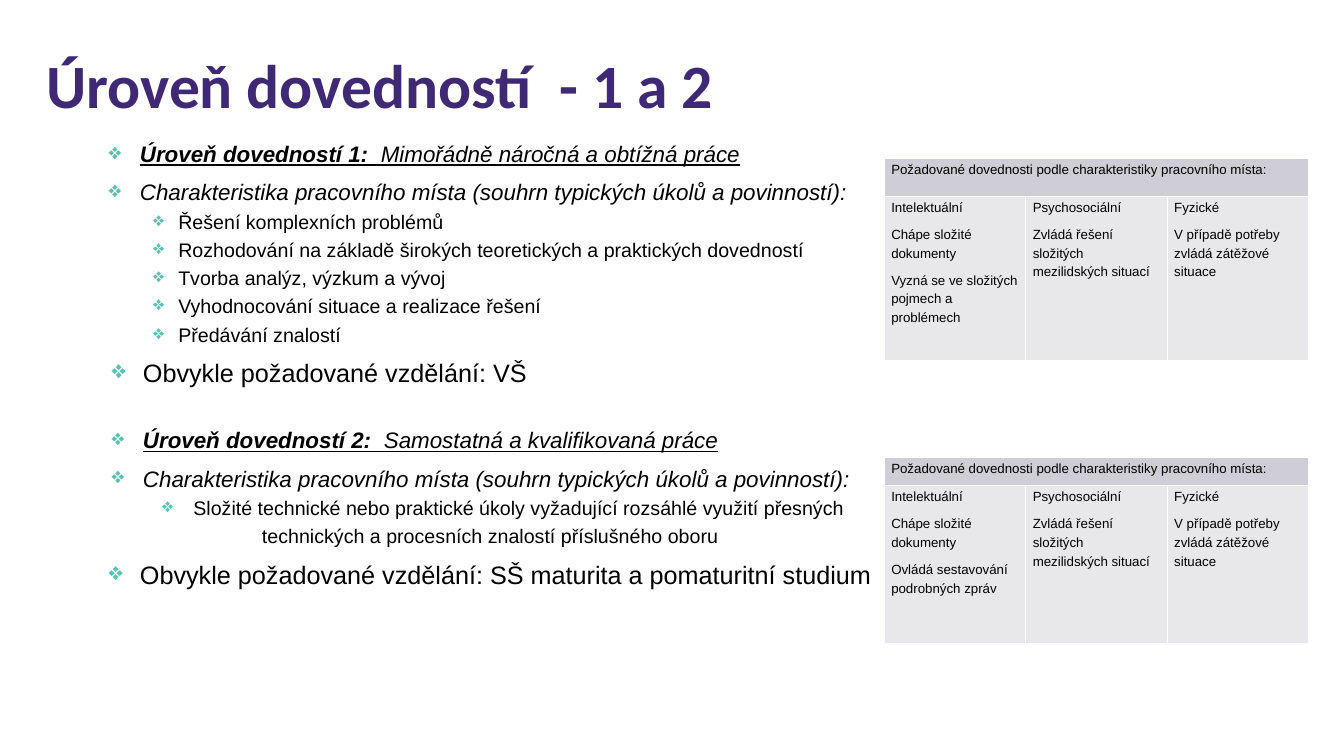
from lxml import etree
from pptx import Presentation
from pptx import util as u
from pptx.dml.color import RGBColor
from pptx.enum import text
from pptx.oxml import ns

Inches, Pt = u.Inches, u.Pt
COLORS = {
    "title": "3F2874", "text": "000000", "bullet": "57C2B2",
    "header": "CFCDD6", "cell": "E8E8EB", "border": "FFFFFF",
}
TASKS = "Charakteristika pracovního místa (souhrn typických úkolů a\u00a0povinností):"
TABLE_TITLE = "Požadované dovednosti podle charakteristiky pracovního místa:"
SOCIAL = ["Psychosociální", "Zvládá řešení složitých mezilidských situací"]
PHYSICAL = ["Fyzické", "V\u00a0případě potřeby zvládá zátěžové situace"]


def add_run(paragraph, content, size, color="text", name="Arial", bold=False, italic=False, underline=False):
    """Add one formatted run."""
    run = paragraph.add_run()
    run.text = content
    font = run.font
    font.name, font.size = name, Pt(size)
    font.bold, font.italic, font.underline = bold, italic, underline
    font.color.rgb = RGBColor.from_string(COLORS[color])


def add_color(parent, color):
    """Add an RGB colour element to a parent element."""
    etree.SubElement(parent, ns.qn("a:srgbClr"), val=COLORS[color])


def add_text_frame(slide, left, top, width, height, anchor):
    """Add a wrapping text box and return its frame."""
    frame = slide.shapes.add_textbox(Inches(left), Inches(top), Inches(width), Inches(height)).text_frame
    frame.word_wrap = True
    frame.vertical_anchor = anchor
    return frame


def next_paragraph(frame):
    """Return the empty first paragraph or a new one."""
    first = frame.paragraphs[0]
    return frame.add_paragraph() if first.runs else first


def add_item(frame, runs, left, hanging=0.31, before=10, level=0):
    """Add a list paragraph; a hanging indent brings a bullet."""
    paragraph = next_paragraph(frame)
    paragraph.level = level
    properties = paragraph._p.get_or_add_pPr()
    properties.set("marL", str(Inches(left)))
    properties.set("indent", str(-Inches(hanging)))
    if hanging:
        add_color(etree.SubElement(properties, ns.qn("a:buClr")), "bullet")
        etree.SubElement(properties, ns.qn("a:buChar"), char="❖")
    paragraph.line_spacing = 0.9
    paragraph.space_before = Pt(before)
    for content, size, style in runs:
        add_run(paragraph, content, size, **style)


def add_heading(frame, label, description, left, before):
    """Add the underlined heading of a skill level."""
    style = {"italic": True, "underline": True}
    add_item(frame, [(label + "  ", 16, {"bold": True, **style}), (description, 16, style)], left, before=before)
    add_item(frame, [(TASKS, 16, {"italic": True})], left)


def add_detail(frame, content, left=0.75, hanging=0.25):
    """Add a second-level item."""
    add_item(frame, [(content, 14, {})], left, hanging, before=5, level=1)


def add_education(frame, content, left):
    """Add the line with the usual education."""
    add_item(frame, [("Obvykle požadované vzdělání: " + content, 18, {})], left)


def fill_cell(cell, lines, color):
    """Write, border and fill a table cell."""
    cell.margin_left = cell.margin_right = Inches(0.07)
    cell.margin_top = cell.margin_bottom = 0
    for line in lines:
        paragraph = next_paragraph(cell.text_frame)
        paragraph.line_spacing = 1.25
        paragraph.space_after = Pt(6)
        add_run(paragraph, line, 9.5)
    properties = cell._tc.get_or_add_tcPr()
    for side in ("lnL", "lnR", "lnT", "lnB"):
        border = etree.SubElement(properties, ns.qn("a:" + side), w=str(Pt(1)))
        add_color(etree.SubElement(border, ns.qn("a:solidFill")), "border")
    cell.fill.solid()
    cell.fill.fore_color.rgb = RGBColor.from_string(COLORS[color])


def add_skill_table(slide, top, heights, intellectual):
    """Add a table with a merged header over three skill columns."""
    frame = slide.shapes.add_table(2, 3, Inches(8.77), Inches(top), Inches(4.21), Inches(sum(heights)))
    table = frame.table
    table.first_row = table.horz_banding = False
    for row, height in zip(table.rows, heights):
        row.height = Inches(height)
    table.cell(0, 0).merge(table.cell(0, 2))
    columns = [["Intelektuální", "Chápe složité dokumenty", intellectual], SOCIAL, PHYSICAL]
    for index, lines in enumerate(columns):
        fill_cell(table.cell(0, index), [] if index else [TABLE_TITLE], "header")
        fill_cell(table.cell(1, index), lines, "cell")


def main():
    """Build the slide and save it."""
    presentation = Presentation()
    presentation.slide_width, presentation.slide_height = Inches(13.33), Inches(7.5)
    slide = presentation.slides.add_slide(presentation.slide_layouts[6])

    title = add_text_frame(slide, 0.36, 0.4, 12.6, 0.95, text.MSO_ANCHOR.MIDDLE).paragraphs[0]
    title.line_spacing = 0.9
    add_run(title, "Úroveň dovedností  - 1 a 2", 44, "title", "Calibri", bold=True)

    body = add_text_frame(slide, 0.92, 1.37, 12.07, 5.39, text.MSO_ANCHOR.TOP)
    add_heading(body, "Úroveň dovedností 1:", "Mimořádně náročná a obtížná práce", 0.37, before=0)
    for task in (
        "Řešení komplexních problémů",
        "Rozhodování na základě širokých teoretických a praktických dovedností",
        "Tvorba analýz, výzkum a vývoj",
        "Vyhodnocování situace a realizace řešení",
        "Předávání znalostí",
    ):
        add_detail(body, task)
    add_education(body, "VŠ", 0.4)
    add_heading(body, "Úroveň dovedností 2:", "Samostatná a kvalifikovaná práce", 0.4, before=30)
    add_detail(body, "Složité technické nebo praktické úkoly vyžadující rozsáhlé využití přesných", 0.9, 0.31)
    add_detail(body, "technických a procesních znalostí příslušného oboru", 1.58, 0)
    add_education(body, "SŠ maturita a pomaturitní studium", 0.37)

    add_skill_table(slide, 1.57, (0.38, 1.63), "Vyzná se ve složitých pojmech a problémech")
    add_skill_table(slide, 4.54, (0.28, 1.57), "Ovládá sestavování podrobných zpráv")
    presentation.save("out.pptx")


if __name__ == "__main__":
    main()
